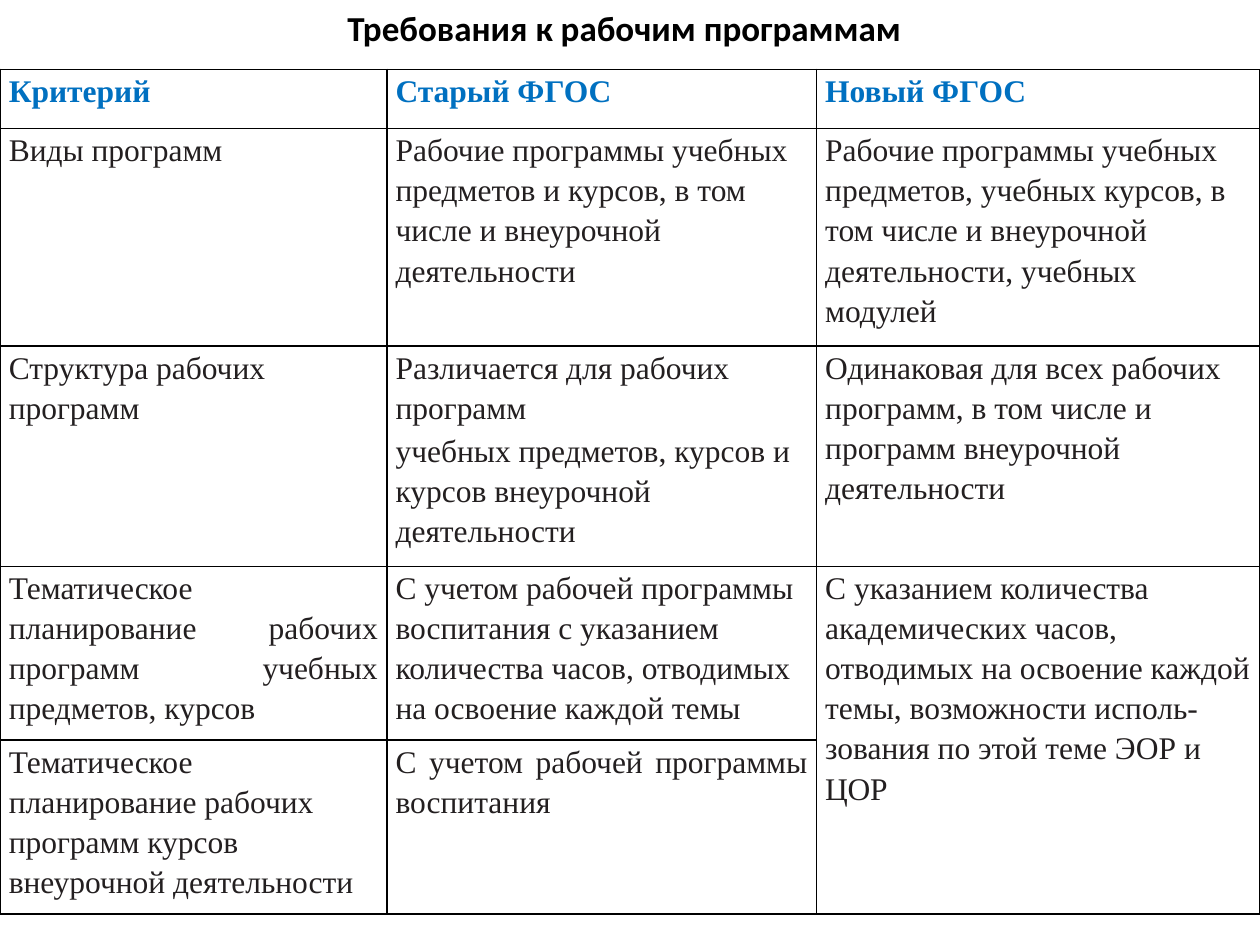
"""Build a slide comparing requirements for curricula in a bordered table."""
from lxml import etree
from pptx import Presentation
from pptx.dml.color import RGBColor
from pptx.enum.text import MSO_AUTO_SIZE, PP_ALIGN
from pptx.oxml.ns import qn
from pptx.util import Inches, Pt

LEFT, CENTER, JUSTIFY = PP_ALIGN.LEFT, PP_ALIGN.CENTER, PP_ALIGN.JUSTIFY
FIT_SHAPE = MSO_AUTO_SIZE.SHAPE_TO_FIT_TEXT
BLACK = RGBColor(0x00, 0x00, 0x00)
BLUE = RGBColor(0x00, 0x70, 0xC0)
DARK = RGBColor(0x23, 0x1F, 0x20)

COLUMN_WIDTHS = [3.07, 3.41, 3.52]
ROW_HEIGHTS = [0.47, 1.72, 1.75, 1.38, 1.38]
ROWS = [
    ["Критерий", "Старый ФГОС", "Новый ФГОС"],
    [
        "Виды программ",
        "Рабочие программы учебных предметов и курсов, в том числе и внеурочной деятельности",
        "Рабочие программы учебных предметов, учебных курсов, в том числе и внеурочной деятельности, учебных модулей",
    ],
    [
        "Структура рабочих программ",
        "Различается для рабочих программ\nучебных предметов, курсов и курсов внеурочной деятельности",
        "Одинаковая для всех рабочих программ, в том числе и программ внеурочной деятельности",
    ],
    [
        "Тематическое планирование рабочих программ учебных предметов, курсов",
        "С учетом рабочей программы воспитания с указанием количества часов, отводимых на освоение каждой темы",
        "С указанием количества академических часов, отводимых на освоение каждой темы, возможности исполь- зования по этой теме ЭОР и ЦОР",
    ],
    [
        "Тематическое планирование рабочих программ курсов внеурочной деятельности",
        "С учетом рабочей программы воспитания",
    ],
]
JUSTIFIED = {(3, 0), (4, 1)}
SPACE_BEFORE = {(2, 1): 6.3, (2, 2): 6, (3, 0): 6, (4, 0): 6, (4, 1): 6}
NO_SPACE_AFTER = {(1, 2), *SPACE_BEFORE}


def add_text(paragraph, text, font_name, size, color, bold):
    run = paragraph.add_run()
    run.text = text
    run.font.name = font_name
    run.font.size = Pt(size)
    run.font.color.rgb = color
    run.font.bold = bold


def add_borders(cell):
    properties = cell._tc.get_or_add_tcPr()
    for index, side in enumerate(["a:lnL", "a:lnR", "a:lnT", "a:lnB"]):
        line = etree.Element(qn(side), w=str(Pt(1)))
        fill = etree.SubElement(line, qn("a:solidFill"))
        etree.SubElement(fill, qn("a:srgbClr"), val=str(BLACK))
        properties.insert(index, line)


presentation = Presentation()
presentation.slide_width = Inches(10)
presentation.slide_height = Inches(7.5)
slide = presentation.slides.add_slide(presentation.slide_layouts[6])

title = slide.shapes.add_textbox(Inches(2.66), Inches(0), Inches(4.63), Inches(0.44))
title.text_frame.word_wrap = False
title.text_frame.auto_size = FIT_SHAPE
title_paragraph = title.text_frame.paragraphs[0]
add_text(title_paragraph, "Требования к рабочим программам", "Calibri", 20, BLACK, True)

table = slide.shapes.add_table(
    len(ROW_HEIGHTS), len(COLUMN_WIDTHS), Inches(0), Inches(0.55),
    Inches(sum(COLUMN_WIDTHS)), Inches(sum(ROW_HEIGHTS)),
).table
table.first_row = False
table.horz_banding = False
for column, width in zip(table.columns, COLUMN_WIDTHS):
    column.width = Inches(width)
for row, height in zip(table.rows, ROW_HEIGHTS):
    row.height = Inches(height)
table.cell(3, 2).merge(table.cell(4, 2))

for row_index in range(len(ROW_HEIGHTS)):
    for column_index in range(len(COLUMN_WIDTHS)):
        cell = table.cell(row_index, column_index)
        cell.fill.background()
        add_borders(cell)
        cell.margin_left = cell.margin_right = Inches(0.07)
        cell.margin_top = cell.margin_bottom = Inches(0)

for row_index, texts in enumerate(ROWS):
    is_header = row_index == 0
    for column_index, text in enumerate(texts):
        position = (row_index, column_index)
        text_frame = table.cell(*position).text_frame
        for line_index, line in enumerate(text.split("\n")):
            if line_index:
                paragraph = text_frame.add_paragraph()
                paragraph.space_before = Pt(1.6)
            else:
                paragraph = text_frame.paragraphs[0]
                paragraph.space_before = Pt(SPACE_BEFORE.get(position, 0))
            paragraph.alignment = JUSTIFY if position in JUSTIFIED else LEFT
            paragraph.line_spacing = 1.15
            paragraph.space_after = Pt(0 if position in NO_SPACE_AFTER else 4.6)
            add_text(paragraph, line, "Times New Roman", 18, BLUE if is_header else DARK, is_header)

presentation.save("out.pptx")
